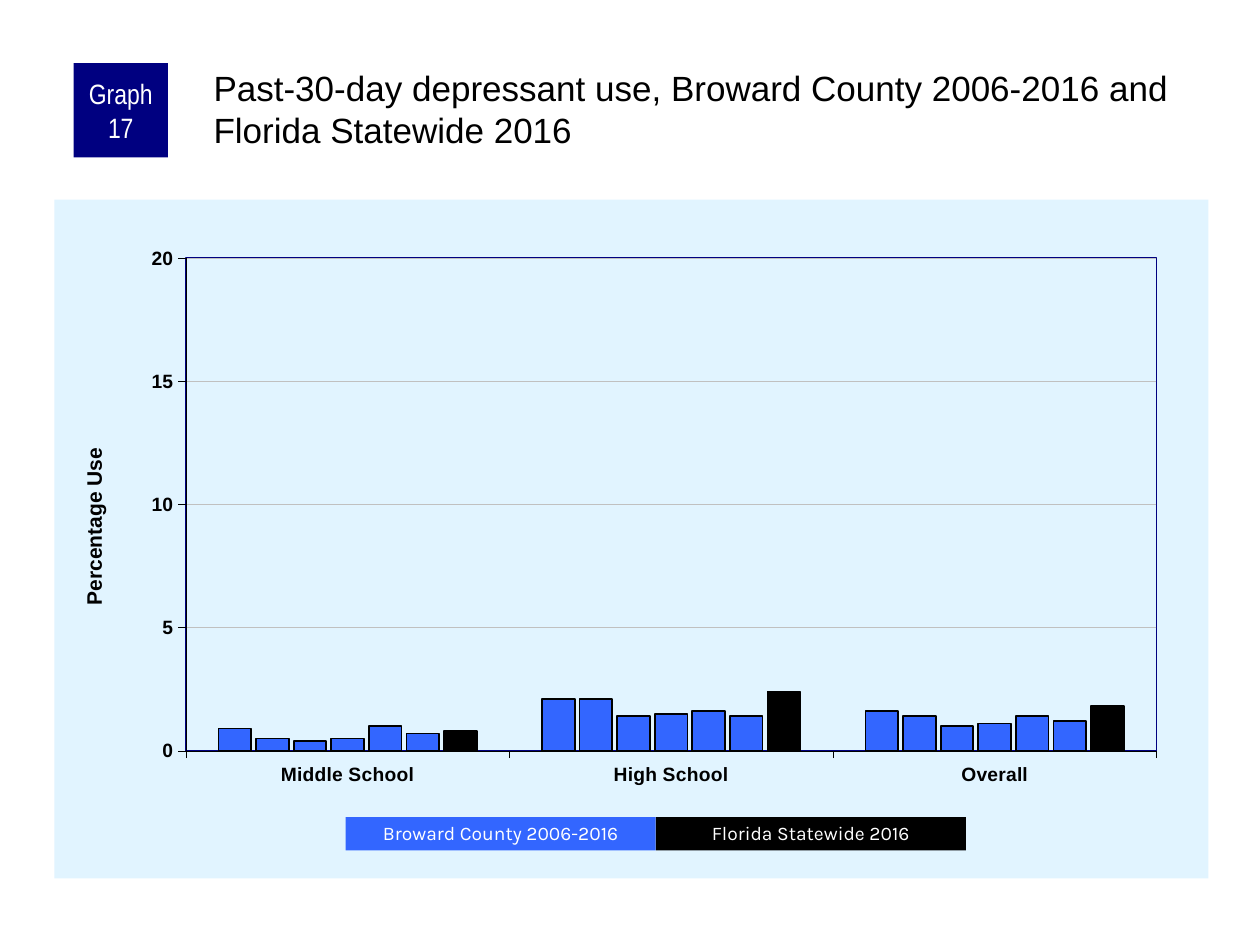
from lxml import etree
from pptx import Presentation
from pptx.chart.data import CategoryChartData
from pptx.dml.color import RGBColor
from pptx.enum.chart import XL_CHART_TYPE, XL_TICK_MARK
from pptx.enum.shapes import MSO_SHAPE
from pptx.enum.text import MSO_ANCHOR, PP_ALIGN
from pptx.oxml import parse_xml
from pptx.oxml.ns import nsdecls, qn
from pptx.util import Pt

COLUMN = XL_CHART_TYPE.COLUMN_CLUSTERED
OUT = XL_TICK_MARK.OUTSIDE
RECT = MSO_SHAPE.RECTANGLE
TOP, MIDDLE = MSO_ANCHOR.TOP, MSO_ANCHOR.MIDDLE
LEFT, CENTER = PP_ALIGN.LEFT, PP_ALIGN.CENTER

BLACK = RGBColor(0, 0, 0)
WHITE = RGBColor(255, 255, 255)
NAVY = RGBColor(0, 0, 128)
BLUE = RGBColor(0x33, 0x66, 0xFF)
GREY = RGBColor(0xC0, 0xC0, 0xC0)
PALE = RGBColor(0xE1, 0xF4, 0xFF)

LEVELS = ["Middle School", "High School", "Overall"]
RATES = [
    (0.9, 2.1, 1.6),
    (0.5, 2.1, 1.4),
    (0.4, 1.4, 1.0),
    (0.5, 1.5, 1.1),
    (1.0, 1.6, 1.4),
    (0.7, 1.4, 1.2),
    (0.8, 2.4, 1.8),
]


def set_font(font, size, color=BLACK, name="Arial", bold=False):
    font.size = Pt(size)
    font.name = name
    font.bold = bold
    font.color.rgb = color


def set_text(frame, text, size=11, color=WHITE, name="Arial", align=CENTER,
             anchor=MIDDLE, inset=(7.2, 3.6, 7.2, 3.6), space=1.0):
    frame.word_wrap = True
    frame.vertical_anchor = anchor
    frame.margin_left, frame.margin_top, frame.margin_right, frame.margin_bottom = map(Pt, inset)
    para = frame.paragraphs[0]
    para.alignment = align
    para.line_spacing = space
    run = para.add_run()
    run.text = text
    set_font(run.font, size, color, name)


def set_line(line, color, width):
    line.color.rgb = color
    line.width = Pt(width)


def place(parent, index, **values):
    for old in parent.findall(qn("c:layout")):
        parent.remove(old)
    layout = parse_xml(f"<c:layout {nsdecls('c')}><c:manualLayout/></c:layout>")
    for key, value in values.items():
        etree.SubElement(layout[0], qn(f"c:{key}")).set("val", str(value))
    parent.insert(index, layout)


def make_props(fill, line):
    return parse_xml(f"<c:spPr {nsdecls('c', 'a')}>{fill}<a:ln{line}</a:ln></c:spPr>")


def solid(color):
    return f'<a:solidFill><a:srgbClr val="{color}"/></a:solidFill>'


class Deck:
    def __init__(self):
        self.show = Presentation()
        self.show.slide_width, self.show.slide_height = Pt(720), Pt(540)
        self.slide = self.show.slides.add_slide(self.show.slide_layouts[5])

    def title(self, box, text):
        shape = self.slide.shapes.title
        shape.left, shape.top, shape.width, shape.height = map(Pt, box)
        set_text(shape.text_frame, text, size=20, color=BLACK, align=LEFT,
                 anchor=TOP, inset=(2, 2, 0, 0))

    def block(self, box, text, fill, **style):
        shape = self.slide.shapes.add_shape(RECT, *map(Pt, box))
        shape.shadow.inherit = False
        shape.fill.solid()
        shape.fill.fore_color.rgb = fill
        shape.line.fill.background()
        set_text(shape.text_frame, text, **style)

    def chart(self, box):
        data = CategoryChartData()
        data.categories = LEVELS
        for number, rates in enumerate(RATES, 1):
            data.add_series(f"Series {number}", rates)
        chart = self.slide.shapes.add_chart(COLUMN, *map(Pt, box), data).chart
        chart.has_title = chart.has_legend = False
        set_font(chart.font, 8)

        plot = chart.plots[0]
        plot.gap_width, plot.overlap = 200, -15
        plot.vary_by_categories = False
        for bars in plot.series:
            bars.format.fill.solid()
            bars.format.fill.fore_color.rgb = BLUE
            set_line(bars.format.line, BLACK, 1)
        bars.format.fill.fore_color.rgb = BLACK

        for axis in (chart.category_axis, chart.value_axis):
            axis.major_tick_mark = OUT
            set_font(axis.tick_labels.font, 11, bold=True)
            set_line(axis.format.line, BLACK, 0.25)
        axis.minimum_scale, axis.maximum_scale, axis.major_unit = 0, 20, 5
        set_line(axis.major_gridlines.format.line, GREY, 0.25)
        run = axis.axis_title.text_frame.paragraphs[0].add_run()
        run.text = "Percentage Use"
        set_font(run.font, 12, bold=True)
        place(axis.axis_title._element, 1, xMode="edge", yMode="edge", x=0.02, y=0.36)

        space = chart._chartSpace
        body = space.find(qn("c:chart"))
        body.addnext(make_props(solid(PALE), "><a:noFill/>"))
        area = body.find(qn("c:plotArea"))
        place(area, 0, layoutTarget="inner", xMode="edge", yMode="edge",
              x=0.114, y=0.086, w=0.841, h=0.726)
        area.append(make_props("<a:noFill/>", f' w="{Pt(1)}">{solid(NAVY)}'))


def main():
    deck = Deck()
    deck.title((120, 36, 570, 60),
               "Past-30-day depressant use, Broward County 2006-2016 and Florida Statewide 2016")
    deck.chart((31, 114, 659.5, 388))
    deck.block((42, 36, 54, 54), "Graph 17", NAVY, size=16,
               name="Arial Narrow", inset=(3.6, 0, 3.6, 0))
    keys = [("Broward County 2006-2016", BLUE), ("Florida Statewide 2016", BLACK)]
    for index, (text, fill) in enumerate(keys):
        deck.block((197.5 + 177.25 * index, 467, 177.25, 19), text, fill, name="Karla", space=0.9)
    deck.show.save("out.pptx")


if __name__ == "__main__":
    main()
